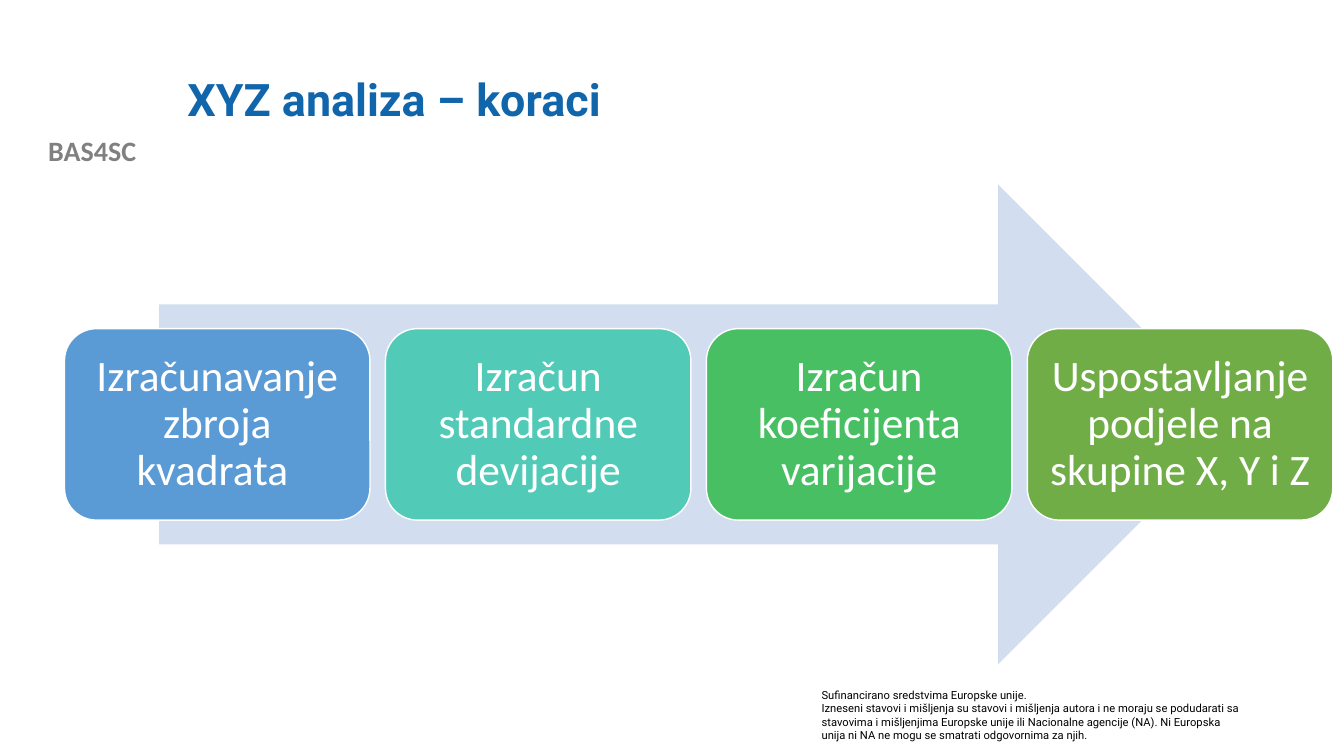
from lxml import etree
from pptx import Presentation
from pptx import util as u
from pptx.dml.color import RGBColor
from pptx.enum import shapes, text

ALIGN = text.PP_ALIGN
ANCHOR = text.MSO_ANCHOR
STEPS = [
    ("Izračunavanje zbroja kvadrata ", "5B9BD5"),
    ("Izračun standardne devijacije", "52CAB8"),
    ("Izračun koeficijenta varijacije", "49BF64"),
    ("Uspostavljanje podjele na skupine X, Y i Z", "70AD47"),
]
DISCLAIMER = [
    "Sufinancirano sredstvima Europske unije.",
    "Izneseni stavovi i mišljenja su stavovi i mišljenja autora i ne moraju se "
    "podudarati sa stavovima i mišljenjima Europske unije ili Nacionalne agencije "
    "(NA). Ni Europska unija ni NA ne mogu se smatrati odgovornima za njih.",
]


def color(value):
    return RGBColor.from_string(value)


def write(shape, paragraphs, size, font="Calibri", fill="000000", bold=False,
          align=ALIGN.LEFT, anchor=ANCHOR.TOP, spacing=1.0, inset=None):
    frame = shape.text_frame
    frame.word_wrap = True
    frame.auto_size = text.MSO_AUTO_SIZE.NONE
    frame.vertical_anchor = anchor
    if inset is not None:
        frame.margin_left = frame.margin_right = u.Inches(inset)
        frame.margin_top = frame.margin_bottom = u.Inches(inset)
    frame.text = "\n".join(paragraphs)
    for paragraph in frame.paragraphs:
        paragraph.alignment = align
        paragraph.line_spacing = spacing
        for run in paragraph.runs:
            run.font.size = u.Pt(size)
            run.font.name = font
            run.font.bold = bold
            run.font.color.rgb = color(fill)


class SlideBuilder:
    def __init__(self):
        self.presentation = Presentation()
        self.presentation.slide_width = u.Inches(13.33)
        self.presentation.slide_height = u.Inches(7.5)
        layout = self.presentation.slide_layouts[5]
        self.slide = self.presentation.slides.add_slide(layout)

    def box(self, left, top, width, height):
        across = self.presentation.slide_width / 100
        down = self.presentation.slide_height / 100
        return [round(value) for value in
                (left * across, top * down, width * across, height * down)]

    def title(self, area, words):
        shape = self.slide.shapes.title
        shape.left, shape.top, shape.width, shape.height = self.box(*area)
        write(shape, [words], 32, font="Roboto", fill="1065AB", bold=True,
              anchor=ANCHOR.MIDDLE, spacing=0.9)

    def label(self, area, paragraphs, size, **style):
        shape = self.slide.shapes.add_textbox(*self.box(*area))
        write(shape, paragraphs, size, **style)

    def block(self, kind, area, fill, outline=None):
        shape = self.slide.shapes.add_shape(kind, *self.box(*area))
        shape.shadow.inherit = False
        shape.fill.solid()
        shape.fill.fore_color.rgb = color(fill)
        if outline:
            shape.line.color.rgb = color(outline)
            shape.line.width = u.Pt(1)
        else:
            shape.line.fill.background()
        return shape

    def step(self, area, words, fill):
        shape = self.block(shapes.MSO_SHAPE.ROUNDED_RECTANGLE, area, fill, "FFFFFF")
        write(shape, [words], 31, fill="FFFFFF", align=ALIGN.CENTER,
              anchor=ANCHOR.MIDDLE, spacing=0.9, inset=0.13)


def main():
    builder = SlideBuilder()
    builder.label((0, 17.07, 13.73, 5.87), ["BAS4SC"], 20, fill="808080",
                  bold=True, align=ALIGN.CENTER)
    builder.label((60.39, 90.4, 32.78, 8.53), DISCLAIMER, 8, font="Roboto")
    builder.title((13.2, 5.33, 79.97, 16.27), "XYZ analiza – koraci")
    builder.block(shapes.MSO_SHAPE.RIGHT_ARROW, (11.85, 24.4, 80.27, 63.47), "D2DEEF")
    for index, (words, fill) in enumerate(STEPS):
        builder.step((4.8 + index * 23.88, 43.47, 22.73, 25.33), words, fill)
    builder.presentation.save("out.pptx")


if __name__ == "__main__":
    main()
